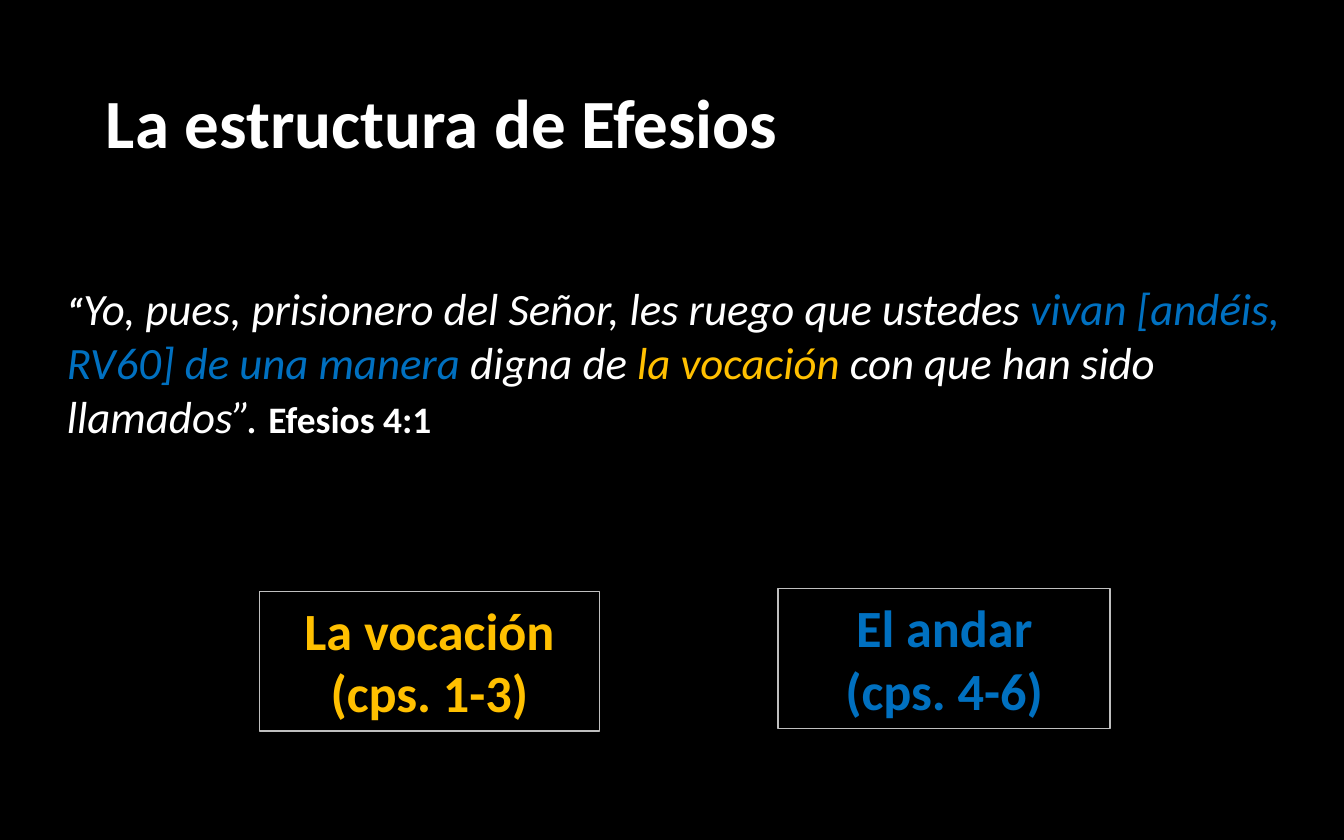
from pptx import Presentation
from pptx.dml.color import RGBColor
from pptx.enum import shapes, text
from pptx.util import Inches, Pt

FONT = "Calibri"
BLACK, WHITE, GREY = "000000", "FFFFFF", "BFBFBF"
BLUE, GOLD = "0070C0", "FFC000"

TITLE = "La estructura de Efesios"
TITLE_AREA = (0.69, 0.33, 8.62, 1.21)

# text, size, colour, bold, italic
VERSE = [
    ("“", 20, WHITE, True, True),
    ("Yo, pues, prisionero del Señor, les ruego que ustedes ", 24, WHITE, False, True),
    ("vivan [andéis, RV60] de una manera", 24, BLUE, False, True),
    (" digna de ", 24, WHITE, False, True),
    ("la vocación ", 24, GOLD, False, True),
    ("con que han sido llamados”. ", 24, WHITE, False, True),
    ("Efesios 4:1", 20, WHITE, True, False),
]
VERSE_AREA = (0.4, 2.04, 9.37, 1.31)

# lines, colour, area
SECTIONS = [
    (("El andar", "(cps. 4-6)"), BLUE, (5.79, 4.38, 2.47, 1.04)),
    (("La vocación", "(cps. 1-3)"), GOLD, (1.93, 4.4, 2.53, 1.04)),
]


def color(value):
    return RGBColor.from_string(value)


def style(font, size, value, bold=True, italic=False):
    font.name = FONT
    font.size = Pt(size)
    font.color.rgb = color(value)
    font.bold = bold
    font.italic = italic


def place(area):
    return [Inches(length) for length in area]


def add_text_box(slide, area):
    """Add a wrapping text box and return its text frame."""
    frame = slide.shapes.add_textbox(*place(area)).text_frame
    frame.word_wrap = True
    return frame


def add_title(slide):
    frame = add_text_box(slide, TITLE_AREA)
    frame.vertical_anchor = text.MSO_ANCHOR.MIDDLE
    paragraph = frame.paragraphs[0]
    paragraph.text = TITLE
    paragraph.line_spacing = 0.9
    style(paragraph.font, 37, WHITE)


def add_verse(slide):
    paragraph = add_text_box(slide, VERSE_AREA).paragraphs[0]
    for words, *look in VERSE:
        run = paragraph.add_run()
        run.text = words
        style(run.font, *look)


def add_section(slide, lines, value, area):
    shape = slide.shapes.add_shape(shapes.MSO_SHAPE.RECTANGLE, *place(area))
    shape.shadow.inherit = False
    shape.fill.background()
    shape.line.color.rgb = color(GREY)
    shape.line.width = Pt(0.75)
    frame = shape.text_frame
    frame.word_wrap = True
    frame.vertical_anchor = text.MSO_ANCHOR.TOP
    frame.text = "\n".join(lines)
    for paragraph in frame.paragraphs:
        paragraph.alignment = text.PP_ALIGN.CENTER
        style(paragraph.font, 28, value)


def main():
    presentation = Presentation()
    presentation.slide_width = Inches(10)
    presentation.slide_height = Inches(6.25)
    slide = presentation.slides.add_slide(presentation.slide_layouts[6])
    slide.background.fill.solid()
    slide.background.fill.fore_color.rgb = color(BLACK)

    add_title(slide)
    for section in SECTIONS:
        add_section(slide, *section)
    add_verse(slide)
    presentation.save("out.pptx")


if __name__ == "__main__":
    main()
